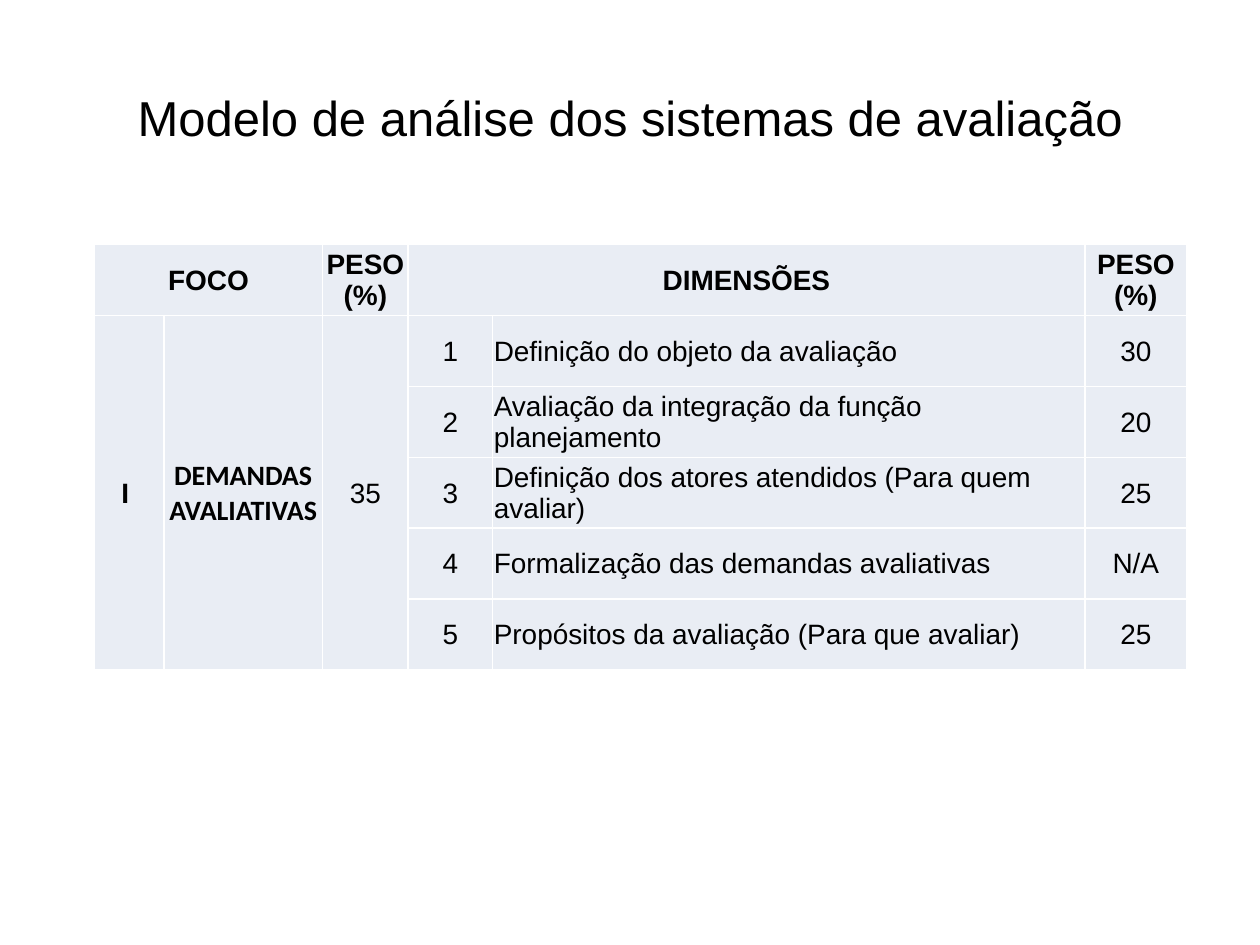
from dataclasses import dataclass

from lxml import etree
from pptx import Presentation
from pptx.dml.color import RGBColor
from pptx.enum.text import MSO_ANCHOR, PP_ALIGN
from pptx.oxml.ns import qn
from pptx.slide import Slide
from pptx.table import Table, _Cell
from pptx.text.text import _Paragraph
from pptx.util import Inches, Pt

CENTER = PP_ALIGN.CENTER
LEFT = PP_ALIGN.LEFT
MIDDLE = MSO_ANCHOR.MIDDLE
BLACK = RGBColor(0x00, 0x00, 0x00)
WHITE = RGBColor(0xFF, 0xFF, 0xFF)
PALE_BLUE = RGBColor(0xE9, 0xED, 0xF4)

COLUMN_WIDTHS = (0.55, 1.26, 0.68, 0.67, 4.7, 0.81)
ROW_COUNT = 6
TABLE_HEIGHT = 3.38
DIMENSIONS = (
    ("Definição do objeto da avaliação", "30"),
    ("Avaliação da integração da função planejamento", "20"),
    ("Definição dos atores atendidos (Para quem avaliar)", "25"),
    ("Formalização das demandas avaliativas", "N/A"),
    ("Propósitos da avaliação (Para que avaliar)", "25"),
)


@dataclass(frozen=True)
class CellEntry:
    row: int
    column: int
    text: str
    bold: bool = False
    alignment: PP_ALIGN = CENTER
    font_name: str = "Arial"
    row_span: int = 1
    column_span: int = 1


FOCUS_ENTRIES = (
    CellEntry(0, 0, "FOCO", bold=True, column_span=2),
    CellEntry(0, 2, "PESO (%)", bold=True),
    CellEntry(0, 3, "DIMENSÕES", bold=True, column_span=2),
    CellEntry(0, 5, "PESO (%)", bold=True),
    CellEntry(1, 0, "I ", bold=True, row_span=5),
    CellEntry(1, 1, "DEMANDAS AVALIATIVAS", bold=True, font_name="Calibri", row_span=5),
    CellEntry(1, 2, "35", row_span=5),
)


def dimension_entries() -> list[CellEntry]:
    entries = []
    for number, (name, weight) in enumerate(DIMENSIONS, start=1):
        entries += [
            CellEntry(number, 3, str(number)),
            CellEntry(number, 4, name, alignment=LEFT),
            CellEntry(number, 5, weight),
        ]
    return entries


def add_text(paragraph: _Paragraph, text: str, size: int, font_name: str = "Arial",
             bold: bool = False, alignment: PP_ALIGN = CENTER) -> None:
    paragraph.alignment = alignment
    run = paragraph.add_run()
    run.text = text
    run.font.size = Pt(size)
    run.font.name = font_name
    run.font.bold = bold
    run.font.color.rgb = BLACK


def style_cell(cell: _Cell) -> None:
    properties = cell._tc.get_or_add_tcPr()
    for side in ("a:lnL", "a:lnR", "a:lnT", "a:lnB"):
        border = etree.SubElement(properties, qn(side), w=str(Pt(1)))
        border_fill = etree.SubElement(border, qn("a:solidFill"))
        etree.SubElement(border_fill, qn("a:srgbClr"), val=str(WHITE))
    cell.fill.solid()
    cell.fill.fore_color.rgb = PALE_BLUE
    cell.vertical_anchor = MIDDLE
    cell.margin_left = cell.margin_right = cell.margin_top = Inches(0.01)
    cell.margin_bottom = Inches(0)


def fill_cell(table: Table, entry: CellEntry) -> None:
    cell = table.cell(entry.row, entry.column)
    if entry.row_span > 1 or entry.column_span > 1:
        cell.merge(table.cell(entry.row + entry.row_span - 1,
                              entry.column + entry.column_span - 1))
    add_text(cell.text_frame.paragraphs[0], entry.text, 16, entry.font_name,
             entry.bold, entry.alignment)


def add_title(slide: Slide) -> None:
    title = slide.shapes.add_textbox(Inches(0.5), Inches(0.3), Inches(9), Inches(1.25))
    title.text_frame.word_wrap = True
    title.text_frame.vertical_anchor = MIDDLE
    add_text(title.text_frame.paragraphs[0],
             "Modelo de análise dos sistemas de avaliação", 28)


def add_evaluation_table(slide: Slide) -> None:
    table = slide.shapes.add_table(
        ROW_COUNT, len(COLUMN_WIDTHS), Inches(0.75), Inches(1.94),
        Inches(sum(COLUMN_WIDTHS)), Inches(TABLE_HEIGHT)).table
    for column, width in zip(table.columns, COLUMN_WIDTHS):
        column.width = Inches(width)
    for cell in table.iter_cells():
        style_cell(cell)
    for entry in (*FOCUS_ENTRIES, *dimension_entries()):
        fill_cell(table, entry)


def main() -> None:
    """Build the slide with the weighted model for analysing evaluation systems."""
    presentation = Presentation()
    presentation.slide_width = Inches(10)
    presentation.slide_height = Inches(7.5)
    slide = presentation.slides.add_slide(presentation.slide_layouts[6])
    add_title(slide)
    add_evaluation_table(slide)
    presentation.save("out.pptx")


if __name__ == "__main__":
    main()
